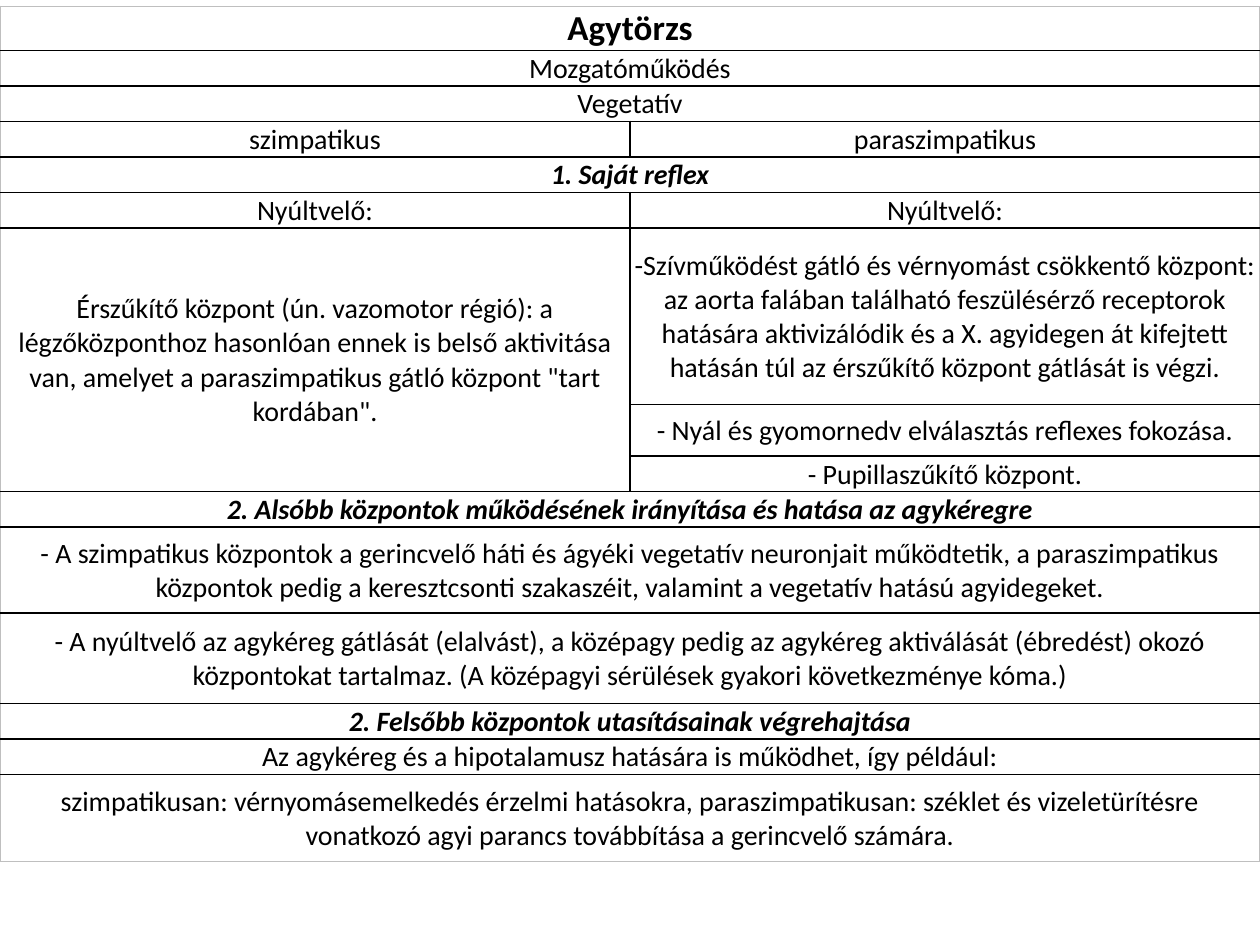
from dataclasses import dataclass

from lxml.etree import SubElement
from pptx import Presentation
from pptx.dml.color import RGBColor
from pptx.enum.text import MSO_ANCHOR as ANCHOR, PP_ALIGN as ALIGN
from pptx.oxml.ns import qn
from pptx.util import Inches, Pt


@dataclass(frozen=True)
class Theme:
    """Colours, font and type sizes of the slide."""
    font: str = "Calibri"
    title: int = 20
    body: int = 16
    text: str = "000000"
    fill: str = "FFFFFF"
    grid: str = "000000"
    frame: str = "BFBFBF"
    line: int = 1


THEME = Theme()
LINE = 0.27
ROWS = [
    (0.28, "title", ["Agytörzs"]),
    (LINE, "body", ["Mozgatóműködés"]),
    (LINE, "body", ["Vegetatív"]),
    (LINE, "body", ["szimpatikus", "paraszimpatikus"]),
    (LINE, "section", ["1. Saját reflex"]),
    (LINE, "body", ["Nyúltvelő:", "Nyúltvelő:"]),
    (1.4, "body", [
        "Érszűkítő központ (ún. vazomotor régió): a légzőközponthoz hasonlóan ennek is "
        "belső aktivitása van, amelyet a paraszimpatikus gátló központ \"tart kordában\".",
        "-Szívműködést gátló és vérnyomást csökkentő központ: az aorta falában található "
        "feszülésérző receptorok hatására aktivizálódik és a X. agyidegen át kifejtett "
        "hatásán túl az érszűkítő központ gátlását is végzi."]),
    (0.41, "body", [None, "- Nyál és gyomornedv elválasztás reflexes fokozása."]),
    (LINE, "body", [None, "- Pupillaszűkítő központ."]),
    (LINE, "section", ["2. Alsóbb központok működésének irányítása és hatása az agykéregre"]),
    (0.68, "body", [
        "- A szimpatikus központok a gerincvelő háti és ágyéki vegetatív neuronjait "
        "működtetik, a paraszimpatikus központok pedig a keresztcsonti szakaszéit, "
        "valamint a vegetatív hatású agyidegeket."]),
    (0.72, "body", [
        "- A nyúltvelő az agykéreg gátlását (elalvást), a középagy pedig az agykéreg "
        "aktiválását (ébredést) okozó központokat tartalmaz. (A középagyi sérülések "
        "gyakori következménye kóma.)"]),
    (LINE, "section", ["2. Felsőbb központok utasításainak végrehajtása"]),
    (LINE, "lead", ["Az agykéreg és a hipotalamusz hatására is működhet, így például:"]),
    (0.69, "body", [
        "szimpatikusan: vérnyomásemelkedés érzelmi hatásokra, paraszimpatikusan: széklet "
        "és vizeletürítésre vonatkozó agyi parancs továbbítása a gerincvelő számára."]),
]


def add_border(cell, side, color):
    """Draw one side of a cell."""
    ln = SubElement(cell._tc.get_or_add_tcPr(), qn(f"a:ln{side}"), w=str(Pt(THEME.line)))
    fill = SubElement(ln, qn("a:solidFill"))
    SubElement(fill, qn("a:srgbClr"), val=color)


def style_cell(cell, outer):
    """Set the margins, borders and fill of a cell, with its outer sides in the frame colour."""
    cell.margin_left = cell.margin_right = cell.margin_top = Inches(0.01)
    cell.margin_bottom = 0
    for side in "LRTB":
        add_border(cell, side, THEME.frame if side in outer else THEME.grid)
    cell.fill.solid()
    cell.fill.fore_color.rgb = RGBColor.from_string(THEME.fill)


def write_cell(cell, text, kind):
    """Write centred text in the style of its kind of row."""
    cell.text = text
    cell.vertical_anchor = ANCHOR.BOTTOM if kind == "lead" else ANCHOR.MIDDLE
    p = cell.text_frame.paragraphs[0]
    p.alignment = ALIGN.CENTER
    p.font.name = THEME.font
    p.font.size = Pt(THEME.title if kind == "title" else THEME.body)
    p.font.bold = kind in ("title", "section")
    p.font.italic = kind == "section"
    p.font.color.rgb = RGBColor.from_string(THEME.text)


def add_overview(s):
    """Add the brain stem table, merging the full-width rows and the tall left cell."""
    height = sum(row[0] for row in ROWS)
    table = s.shapes.add_table(
        len(ROWS), 2, 0, Inches(0.05), Inches(10), Inches(height)).table
    table.first_row = table.horz_banding = False
    last = len(ROWS) - 1
    for i, (height, kind, texts) in enumerate(ROWS):
        table.rows[i].height = Inches(height)
        ends = "T" * (i == 0) + "B" * (i == last)
        for j, side in enumerate("LR"):
            outer = ends + ("LR" if len(texts) == 1 else side)
            style_cell(table.cell(i, j), outer)
        if len(texts) == 1:
            table.cell(i, 0).merge(table.cell(i, 1))
        for j, text in enumerate(texts):
            if text:
                write_cell(table.cell(i, j), text, kind)
    tall = [i for i, row in enumerate(ROWS) if row[2][0] is None]
    table.cell(tall[0] - 1, 0).merge(table.cell(tall[-1], 0))


def main():
    """Build the slide and save it."""
    prs = Presentation()
    prs.slide_width, prs.slide_height = Inches(10), Inches(7.5)
    s = prs.slides.add_slide(prs.slide_layouts[6])
    add_overview(s)
    prs.save("out.pptx")


if __name__ == "__main__":
    main()
